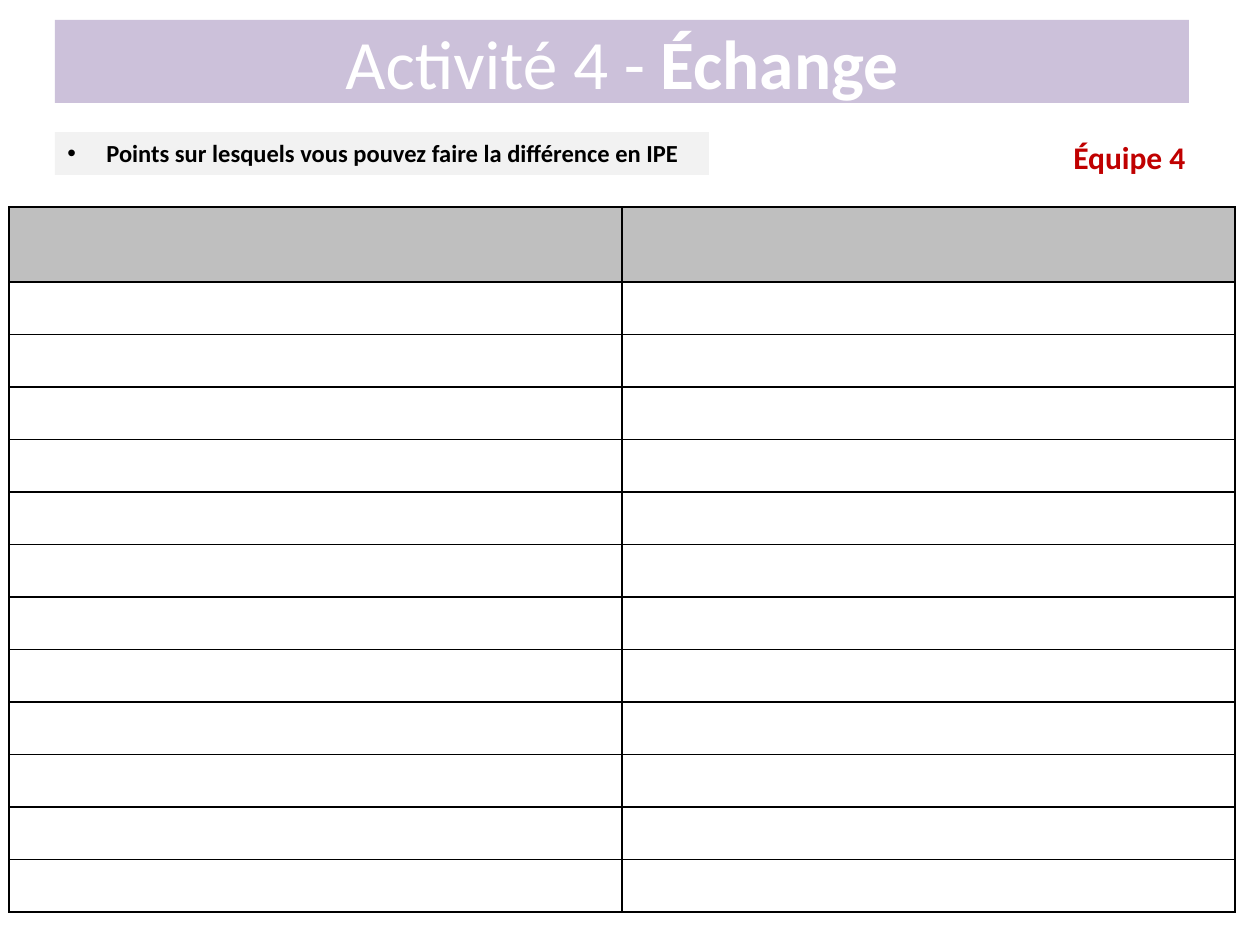
import pptx
import pptx.dml.color
import pptx.enum.shapes
import pptx.enum.text
import pptx.oxml
import pptx.oxml.ns
import pptx.util

RGB = pptx.dml.color.RGBColor
WHITE = RGB(0xFF, 0xFF, 0xFF)
BLACK = RGB(0x00, 0x00, 0x00)
LILAC = RGB(0xCC, 0xC1, 0xDA)
PALE = RGB(0xF2, 0xF2, 0xF2)
GREY = RGB(0xBF, 0xBF, 0xBF)
RED = RGB(0xC0, 0x00, 0x00)

ALIGN = pptx.enum.text.PP_ALIGN
ANCHOR = pptx.enum.text.MSO_ANCHOR
RECT = pptx.enum.shapes.MSO_SHAPE.RECTANGLE
FONT = "Calibri"
SCALE = 914400 / 126


def px(size):
    """Turn px into EMU."""
    return pptx.util.Emu(round(size * SCALE))


def style(run, size, color, bold):
    """Format one run."""
    run.font.name = FONT
    run.font.size = pptx.util.Pt(size)
    run.font.color.rgb = color
    run.font.bold = bold


def panel(slide, box, fill):
    """Add a plain filled rectangle and return its text frame."""
    shape = slide.shapes.add_shape(RECT, *map(px, box))
    shape.shadow.inherit = False
    shape.fill.solid()
    shape.fill.fore_color.rgb = fill
    shape.line.fill.background()
    shape.text_frame.word_wrap = True
    return shape.text_frame


def title(slide, box):
    """Place the title band."""
    frame = panel(slide, box, LILAC)
    frame.margin_top = frame.margin_bottom = 0
    frame.vertical_anchor = ANCHOR.MIDDLE
    para = frame.paragraphs[0]
    para.alignment = ALIGN.CENTER
    for text, bold in (("Activité 4 - ", False), ("Échange", True)):
        run = para.add_run()
        run.text = text
        style(run, 39.6, WHITE, bold)


def topic(slide, box):
    """Place the bulleted topic line."""
    frame = panel(slide, box, PALE)
    frame.vertical_anchor = ANCHOR.TOP
    para = frame.paragraphs[0]
    para.text = "Points sur lesquels vous pouvez faire la différence en IPE"
    para.alignment = ALIGN.LEFT
    style(para.runs[0], 14, BLACK, True)
    props = para._p.get_or_add_pPr()
    props.set("marL", str(px(39)))
    props.set("indent", str(px(-39)))
    space = pptx.oxml.ns.nsdecls("a")
    for xml in (f'<a:buFont {space} typeface="Arial"/>',
                f'<a:buChar {space} char="•"/>'):
        props.append(pptx.oxml.parse_xml(xml))


def team(slide, box):
    """Place the team label."""
    frame = slide.shapes.add_textbox(*map(px, box)).text_frame
    frame.word_wrap = True
    para = frame.paragraphs[0]
    para.text = "Équipe 4"
    para.alignment = ALIGN.RIGHT
    style(para.runs[0], 18, RED, True)


def edge(cell):
    """Draw thin black borders round a cell."""
    props = cell._tc.get_or_add_tcPr()
    space = pptx.oxml.ns.nsdecls("a")
    for spot, side in enumerate("LRTB"):
        props.insert(spot, pptx.oxml.parse_xml(
            f'<a:ln{side} {space} w="{pptx.util.Pt(1)}"><a:solidFill>'
            f'<a:srgbClr val="{BLACK}"/></a:solidFill></a:ln{side}>'))


def grid(slide, box, lines, head):
    """Place the empty two-column table under a grey header row."""
    table = slide.shapes.add_table(lines + 1, 2, *map(px, box)).table
    wide, tall = box[2:]
    for col in table.columns:
        col.width = px(wide / 2)
    for num, row in enumerate(table.rows):
        row.height = px((tall - head) / lines if num else head)
        for cell in row.cells:
            if num:
                cell.fill.background()
            else:
                cell.fill.solid()
                cell.fill.fore_color.rgb = GREY
            edge(cell)


def main():
    """Build and save the slide."""
    deck = pptx.Presentation()
    deck.slide_width, deck.slide_height = px(1260), px(945)
    slide = deck.slides.add_slide(deck.slide_layouts[6])
    title(slide, (55, 20, 1134, 83))
    grid(slide, (9, 207, 1226, 705), 12, 75)
    topic(slide, (55, 132, 654, 43))
    team(slide, (820, 132, 378, 50))
    deck.save("out.pptx")


if __name__ == "__main__":
    main()
